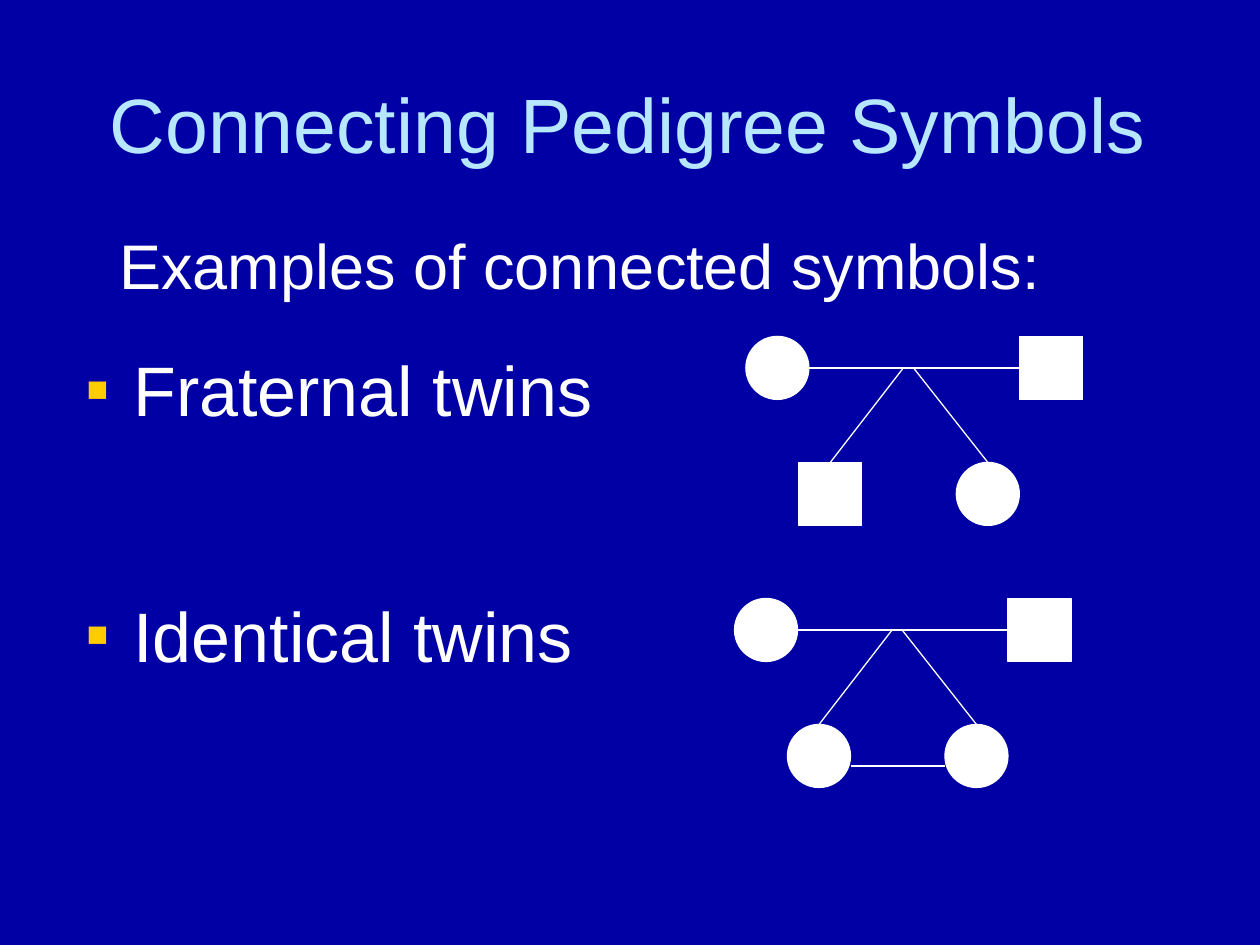
from lxml import etree
from pptx import Presentation
from pptx.dml.color import RGBColor
from pptx.enum.shapes import MSO_CONNECTOR, MSO_SHAPE
from pptx.enum.text import MSO_ANCHOR, MSO_AUTO_SIZE, PP_ALIGN
from pptx.oxml.ns import qn
from pptx.util import Inches, Pt

COLORS = {"background": "0000A4", "title": "B7E7FF", "white": "FFFFFF", "bullet": "FFCC00"}
FEMALE, MALE = MSO_SHAPE.OVAL, MSO_SHAPE.RECTANGLE
SYMBOL_SIZE = 0.5


def style_text(paragraph, size, color):
    paragraph.font.name = "Arial"
    paragraph.font.size = Pt(size)
    paragraph.font.color.rgb = RGBColor.from_string(COLORS[color])


def draw_family(shapes, left, top, symbols, lines):
    white = RGBColor.from_string(COLORS["white"])
    for x1, y1, x2, y2 in lines:
        link = shapes.add_connector(MSO_CONNECTOR.STRAIGHT, Inches(left + x1), Inches(top + y1),
                                    Inches(left + x2), Inches(top + y2))
        link.line.color.rgb = white
        link.line.width = Pt(0.75)
        etree.SubElement(link._element.spPr, qn("a:effectLst"))
    for kind, x, y in symbols:
        person = shapes.add_shape(kind, Inches(left + x), Inches(top + y),
                                  Inches(SYMBOL_SIZE), Inches(SYMBOL_SIZE))
        person.shadow.inherit = False
        person.fill.solid()
        person.fill.fore_color.rgb = white
        person.line.color.rgb = white
        person.line.width = Pt(0.75)


prs = Presentation()
prs.slide_width, prs.slide_height = Inches(10), Inches(7.5)
slide = prs.slides.add_slide(prs.slide_layouts[1])
slide.background.fill.solid()
slide.background.fill.fore_color.rgb = RGBColor.from_string(COLORS["background"])

# Title
title = slide.shapes.title
title.left, title.top, title.width, title.height = (Inches(v) for v in (0.33, 0.25, 9.31, 1.45))
title.text_frame.text = "Connecting Pedigree Symbols"
title.text_frame.vertical_anchor = MSO_ANCHOR.MIDDLE
title.text_frame.paragraphs[0].alignment = PP_ALIGN.CENTER
style_text(title.text_frame.paragraphs[0], 44, "title")

# Twin types
twin_types = slide.placeholders[1]
twin_types.left, twin_types.top, twin_types.width, twin_types.height = (
    Inches(v) for v in (0.58, 2.83, 4.67, 1.17))
twin_types.text_frame.text = "Fraternal twins\nIdentical twins"
twin_types.text_frame.auto_size = MSO_AUTO_SIZE.NONE
for paragraph, space_before in zip(twin_types.text_frame.paragraphs, (0, 102)):
    paragraph.line_spacing = 0.8
    paragraph.space_before = Pt(space_before)
    props = paragraph._p.get_or_add_pPr()
    props.set("marL", str(Inches(0.38)))
    props.set("indent", str(-Inches(0.38)))
    bullet_color = etree.SubElement(props, qn("a:buClr"))
    etree.SubElement(bullet_color, qn("a:srgbClr"), val=COLORS["bullet"])
    etree.SubElement(props, qn("a:buFont"), typeface="Arial")
    etree.SubElement(props, qn("a:buChar"), char="▪")
    style_text(paragraph, 40, "white")

# Introduction
intro = slide.shapes.add_textbox(Inches(0.85), Inches(1.75), Inches(7.51), Inches(0.7))
intro.text_frame.text = "Examples of connected symbols:"
intro.text_frame.word_wrap = False
intro.text_frame.auto_size = MSO_AUTO_SIZE.SHAPE_TO_FIT_TEXT
style_text(intro.text_frame.paragraphs[0], 36, "white")

# Pedigrees: parents, their line, and a line down to each twin
parents = [(FEMALE, 0, 0), (MALE, 2.17, 0)]
family_lines = [(0.5, 0.25, 2.17, 0.25), (0.67, 1, 1.25, 0.25), (1.33, 0.25, 1.92, 1)]
twin_bar = (0.92, 1.33, 1.67, 1.33)

draw_family(slide.shapes, 5.92, 2.67,
            parents + [(MALE, 0.42, 1), (FEMALE, 1.67, 1)], family_lines)
identical_family = slide.shapes.add_group_shape()
draw_family(identical_family.shapes, 5.83, 4.75,
            parents + [(FEMALE, 0.42, 1), (FEMALE, 1.67, 1)], family_lines + [twin_bar])

prs.save("out.pptx")
